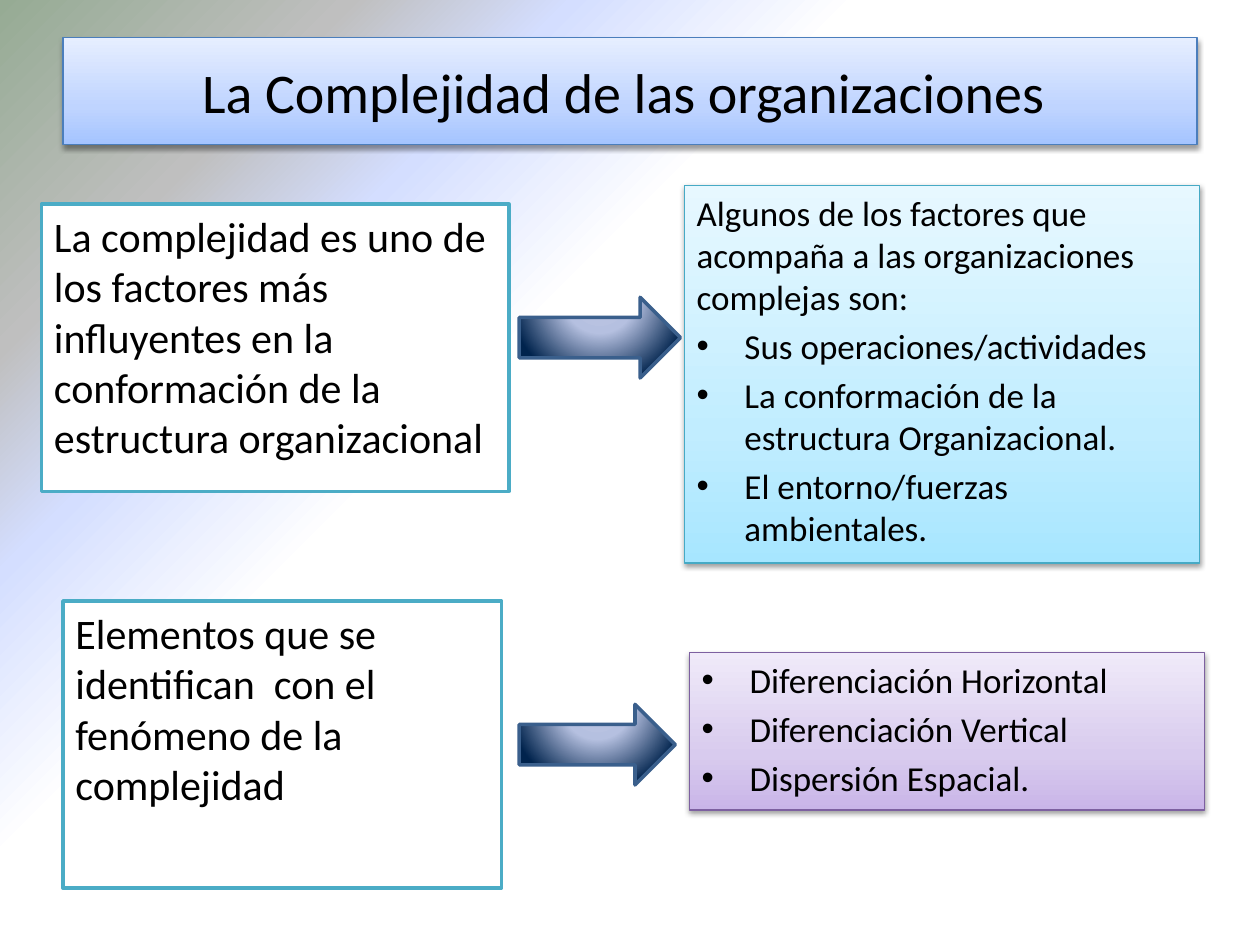
from dataclasses import dataclass
from typing import Optional

from lxml import etree
from pptx import Presentation
from pptx.dml.color import RGBColor
from pptx.enum.shapes import MSO_SHAPE
from pptx.enum.text import MSO_ANCHOR, MSO_AUTO_SIZE, PP_ALIGN
from pptx.oxml import parse_xml
from pptx.oxml.ns import nsdecls, qn
from pptx.util import Inches, Pt

RECTANGLE, RIGHT_ARROW = MSO_SHAPE.RECTANGLE, MSO_SHAPE.RIGHT_ARROW
TOP, MIDDLE = MSO_ANCHOR.TOP, MSO_ANCHOR.MIDDLE
LEFT, CENTER = PP_ALIGN.LEFT, PP_ALIGN.CENTER
FIT_SHAPE, FIXED = MSO_AUTO_SIZE.SHAPE_TO_FIT_TEXT, MSO_AUTO_SIZE.NONE

# Grid of 100 columns by 75 rows
SLIDE_WIDTH, SLIDE_HEIGHT = Inches(10), Inches(7.5)
COLUMN, ROW = SLIDE_WIDTH / 100, SLIDE_HEIGHT / 75
TITLE_ONLY = 5
FONT, BLACK, WHITE = "Calibri", "000000", "FFFFFF"
INDENT = Inches(0.38)


@dataclass(frozen=True)
class Stop:
    position: int
    color: str
    alpha: int = 100


@dataclass(frozen=True)
class Gradient:
    stops: tuple[Stop, ...]
    focus: Optional[tuple[int, int, int, int]] = None  # radial if given


@dataclass(frozen=True)
class Box:
    left: float
    top: float
    width: float
    height: float


@dataclass(frozen=True)
class Style:
    fill: str | Gradient
    line: str
    line_width: float = 2
    shadow: bool = False


@dataclass(frozen=True)
class Panel:
    box: Box
    style: Style
    size: int
    intro: tuple[str, ...] = ()
    bullets: tuple[str, ...] = ()
    auto_size: MSO_AUTO_SIZE = FIXED


def upward(bottom: str, middle: str, top: str) -> Gradient:
    return Gradient((Stop(0, bottom), Stop(35, middle), Stop(100, top)))


BACKGROUND = Gradient((Stop(61, WHITE), Stop(74, "D4DEFF"), Stop(84, "BFBFBF", 43),
                       Stop(100, "96AB94")), (100, 100, 0, 0))
STEEL = Gradient((Stop(0, "BFC9E5"), Stop(40, "B5C0E0"), Stop(100, "00234D")),
                 (50, -80, 50, 180))
TITLE_STYLE = Style(upward("A4C4FF", "BFD4FF", "E6EEFF"), "4B7EBC", 0.75, True)
CYAN_STYLE = Style(upward("A7E6FF", "C1EDFF", "E7F8FF"), "46AAC5", 0.75, True)
PURPLE_STYLE = Style(upward("C9B5E8", "D8CBEE", "F0EAF9"), "7D60A0", 0.75, True)
OUTLINED_STYLE = Style(WHITE, "4BACC6")
ARROW_STYLE = Style(STEEL, "3A5F8C")

TITLE_BOX = Box(5, 3, 90, 8.5)
PANELS = (
    Panel(Box(3.3, 16.2, 37.1, 22.8), OUTLINED_STYLE, 24,
          ("La complejidad es uno de los factores más influyentes en la "
           "conformación de la estructura organizacional",)),
    Panel(Box(54.3, 14.7, 40.9, 30), CYAN_STYLE, 20,
          ("Algunos de los factores que acompaña a las organizaciones complejas son:",),
          ("Sus operaciones/actividades",
           "La conformación de la estructura Organizacional.",
           "El entorno/fuerzas ambientales."), FIT_SHAPE),
    Panel(Box(5, 47.7, 34.8, 22.8), OUTLINED_STYLE, 24,
          ("Elementos que se identifican  con el fenómeno de la complejidad",)),
    Panel(Box(54.7, 51.8, 40.9, 12.5), PURPLE_STYLE, 20,
          bullets=("Diferenciación Horizontal", "Diferenciación Vertical",
                   "Dispersión Espacial."), auto_size=FIT_SHAPE),
)
ARROWS = (Box(41.2, 23.6, 12.8, 6.4), Box(41.2, 55.9, 12.4, 6.4))


def rgb(color: str) -> RGBColor:
    return RGBColor.from_string(color)


def place(box: Box) -> tuple[int, ...]:
    return (round(box.left * COLUMN), round(box.top * ROW),
            round(box.width * COLUMN), round(box.height * ROW))


def set_gradient(fill, properties, gradient: Gradient) -> None:
    """Swap a solid fill inside the given properties element for a gradient."""
    fill.solid()
    stops = "".join(
        f'<a:gs pos="{stop.position * 1000}"><a:srgbClr val="{stop.color}">'
        + (f'<a:alpha val="{stop.alpha * 1000}"/>' if stop.alpha < 100 else "")
        + "</a:srgbClr></a:gs>" for stop in gradient.stops)
    if gradient.focus:
        sides = " ".join(f'{side}="{share * 1000}"'
                         for side, share in zip("ltrb", gradient.focus))
        direction = f'<a:path path="circle"><a:fillToRect {sides}/></a:path>'
    else:
        direction = f'<a:lin ang="{270 * 60000}" scaled="1"/>'
    properties.replace(properties.find(qn("a:solidFill")), parse_xml(
        f'<a:gradFill {nsdecls("a")} rotWithShape="1"><a:gsLst>{stops}</a:gsLst>'
        f'{direction}</a:gradFill>'))


def apply_style(shape, style: Style) -> None:
    properties = shape._element.spPr
    if isinstance(style.fill, Gradient):
        set_gradient(shape.fill, properties, style.fill)
    else:
        shape.fill.solid()
        shape.fill.fore_color.rgb = rgb(style.fill)
    shape.line.color.rgb = rgb(style.line)
    shape.line.width = Pt(style.line_width)
    shape.shadow.inherit = False
    if style.shadow:
        shadow = etree.SubElement(
            properties.find(qn("a:effectLst")), qn("a:outerShdw"),
            blurRad=str(Pt(3.1)), dist=str(Pt(1.6)), dir=str(90 * 60000), rotWithShape="0")
        color = etree.SubElement(shadow, qn("a:srgbClr"), val=BLACK)
        etree.SubElement(color, qn("a:alpha"), val="38000")


def write(paragraph, text: str, *, size: int, align=LEFT, before: float = 0,
          bullet: bool = False) -> None:
    paragraph.alignment = align
    paragraph.space_before = Pt(before)
    run = paragraph.add_run()
    run.text = text
    run.font.name, run.font.size = FONT, Pt(size)
    run.font.color.rgb = rgb(BLACK)
    if bullet:
        properties = paragraph._p.get_or_add_pPr()
        properties.set("marL", str(INDENT))
        properties.set("indent", str(-INDENT))
        etree.SubElement(properties, qn("a:buFont"), typeface="Arial")
        etree.SubElement(properties, qn("a:buChar"), char="•")


def add_panel(slide, panel: Panel) -> None:
    shape = slide.shapes.add_shape(RECTANGLE, *place(panel.box))
    apply_style(shape, panel.style)
    frame = shape.text_frame
    frame.word_wrap, frame.vertical_anchor = True, TOP
    frame.auto_size = panel.auto_size
    for index, text in enumerate(panel.intro + panel.bullets):
        paragraph = frame.add_paragraph() if index else frame.paragraphs[0]
        write(paragraph, text, size=panel.size, before=panel.size * 0.2,
              bullet=index >= len(panel.intro))


def main() -> None:
    presentation = Presentation()
    presentation.slide_width, presentation.slide_height = SLIDE_WIDTH, SLIDE_HEIGHT
    slide = presentation.slides.add_slide(presentation.slide_layouts[TITLE_ONLY])

    # Background
    fill = slide.background.fill
    fill.solid()
    set_gradient(fill, slide._element.find(".//" + qn("p:bgPr")), BACKGROUND)

    # Title
    title = slide.shapes.title
    title.left, title.top, title.width, title.height = place(TITLE_BOX)
    apply_style(title, TITLE_STYLE)
    title.text_frame.vertical_anchor = MIDDLE
    title.text_frame.auto_size = FIXED
    write(title.text_frame.paragraphs[0], "La Complejidad de las organizaciones ",
          size=32, align=CENTER)

    # Text panels and the arrows between them
    for panel in PANELS:
        add_panel(slide, panel)
    for box in ARROWS:
        apply_style(slide.shapes.add_shape(RIGHT_ARROW, *place(box)), ARROW_STYLE)

    presentation.save("out.pptx")


if __name__ == "__main__":
    main()
